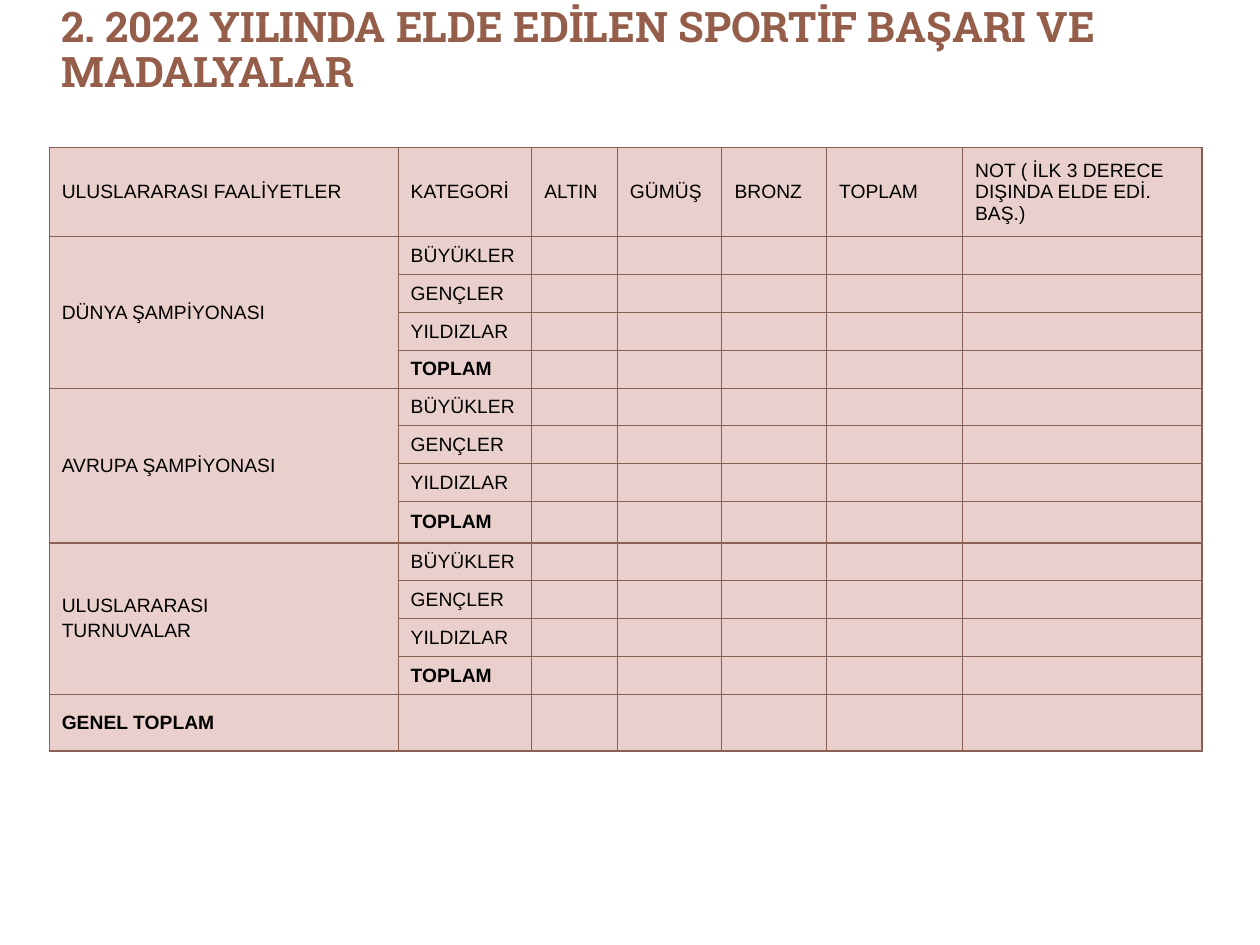
from dataclasses import dataclass

from lxml.etree import SubElement
from pptx import Presentation
from pptx.dml.color import RGBColor as RGB
from pptx.enum.text import MSO_ANCHOR
from pptx.oxml.ns import qn
from pptx.util import Inches, Pt


@dataclass(frozen=True)
class Theme:
    title_font: str = "Roboto Slab"
    title_size: int = 24
    title_color: str = "955E4B"
    body_font: str = "Arial"
    body_size: int = 11
    body_color: str = "000000"
    cell_fill: str = "EAD0CC"
    border_color: str = "896154"
    border_width: float = 0.75


THEME = Theme()
TITLE = "2. 2022 YILINDA ELDE EDİLEN SPORTİF BAŞARI VE MADALYALAR"
HEADERS = ["ULUSLARARASI FAALİYETLER", "KATEGORİ", "ALTIN", "GÜMÜŞ", "BRONZ",
           "TOPLAM", "NOT ( İLK 3 DERECE DIŞINDA ELDE EDİ. BAŞ.)"]
EVENTS = ["DÜNYA ŞAMPİYONASI", "AVRUPA ŞAMPİYONASI", "ULUSLARARASI\nTURNUVALAR"]
CATEGORIES = ["BÜYÜKLER", "GENÇLER", "YILDIZLAR", "TOPLAM"]
GRAND_TOTAL = "GENEL TOPLAM"

COLUMNS = [2.77, 1.06, 0.68, 0.83, 0.83, 1.08, 1.9]
HEADER_HEIGHT, ROW_HEIGHT, TOTAL_HEIGHT = 0.71, 0.3, 0.45
TALL_ROW, TALL_HEIGHT = 8, 0.33
LEFT, TABLE_TOP = 0.39, 1.17


def style_font(font, name, size, color, bold):
    font.name, font.size, font.bold = name, Pt(size), bold
    font.color.rgb = RGB.from_string(color)


def add_title(slide):
    box = slide.shapes.add_textbox(Inches(LEFT), 0, Inches(8.91), Inches(0.48))
    tf = box.text_frame
    tf.word_wrap = True
    p = tf.paragraphs[0]
    p.text = TITLE
    p.line_spacing = 0.9
    style_font(p.font, THEME.title_font, THEME.title_size, THEME.title_color, True)


def add_borders(cell):
    """Draw the four sides; lines must precede the fill in the cell's XML."""
    props = cell._tc.get_or_add_tcPr()
    for side in ("lnL", "lnR", "lnT", "lnB"):
        line = SubElement(props, qn(f"a:{side}"), w=str(Pt(THEME.border_width)))
        fill = SubElement(line, qn("a:solidFill"))
        SubElement(fill, qn("a:srgbClr"), val=THEME.border_color)


def style_cell(cell):
    add_borders(cell)
    cell.fill.solid()
    cell.fill.fore_color.rgb = RGB.from_string(THEME.cell_fill)
    cell.vertical_anchor = MSO_ANCHOR.MIDDLE
    bold = cell.text in (CATEGORIES[-1], GRAND_TOTAL)
    for p in cell.text_frame.paragraphs:
        p.space_before = Pt(0.2 * THEME.body_size)
        style_font(p.font, THEME.body_font, THEME.body_size, THEME.body_color, bold)
        if not p.runs:
            SubElement(p._p, qn("a:endParaRPr"), sz=str(100 * THEME.body_size))


def fill_text(table):
    for col, header in enumerate(HEADERS):
        table.cell(0, col).text = header
    span = len(CATEGORIES)
    for i, event in enumerate(EVENTS):
        top = 1 + i * span
        table.cell(top, 0).text = event
        table.cell(top, 0).merge(table.cell(top + span - 1, 0))
        for row, category in enumerate(CATEGORIES, top):
            table.cell(row, 1).text = category
    table.cell(len(table.rows) - 1, 0).text = GRAND_TOTAL


def add_medal_table(slide):
    heights = [HEADER_HEIGHT, *[ROW_HEIGHT] * (len(EVENTS) * len(CATEGORIES)), TOTAL_HEIGHT]
    heights[TALL_ROW] = TALL_HEIGHT
    table = slide.shapes.add_table(
        len(heights), len(COLUMNS), Inches(LEFT), Inches(TABLE_TOP),
        Inches(sum(COLUMNS)), Inches(sum(heights))).table
    table.first_row = table.horz_banding = False
    for column, width in zip(table.columns, COLUMNS):
        column.width = Inches(width)
    for row, height in zip(table.rows, heights):
        row.height = Inches(height)
    fill_text(table)
    for cell in table.iter_cells():
        style_cell(cell)
    # The header's own total is plain, unlike the totals of the events.
    table.cell(0, HEADERS.index("TOPLAM")).text_frame.paragraphs[0].font.bold = False


def main():
    prs = Presentation()
    prs.slide_width, prs.slide_height = Inches(10), Inches(7.5)
    slide = prs.slides.add_slide(prs.slide_layouts[6])
    add_title(slide)
    add_medal_table(slide)
    prs.save("out.pptx")


if __name__ == "__main__":
    main()
